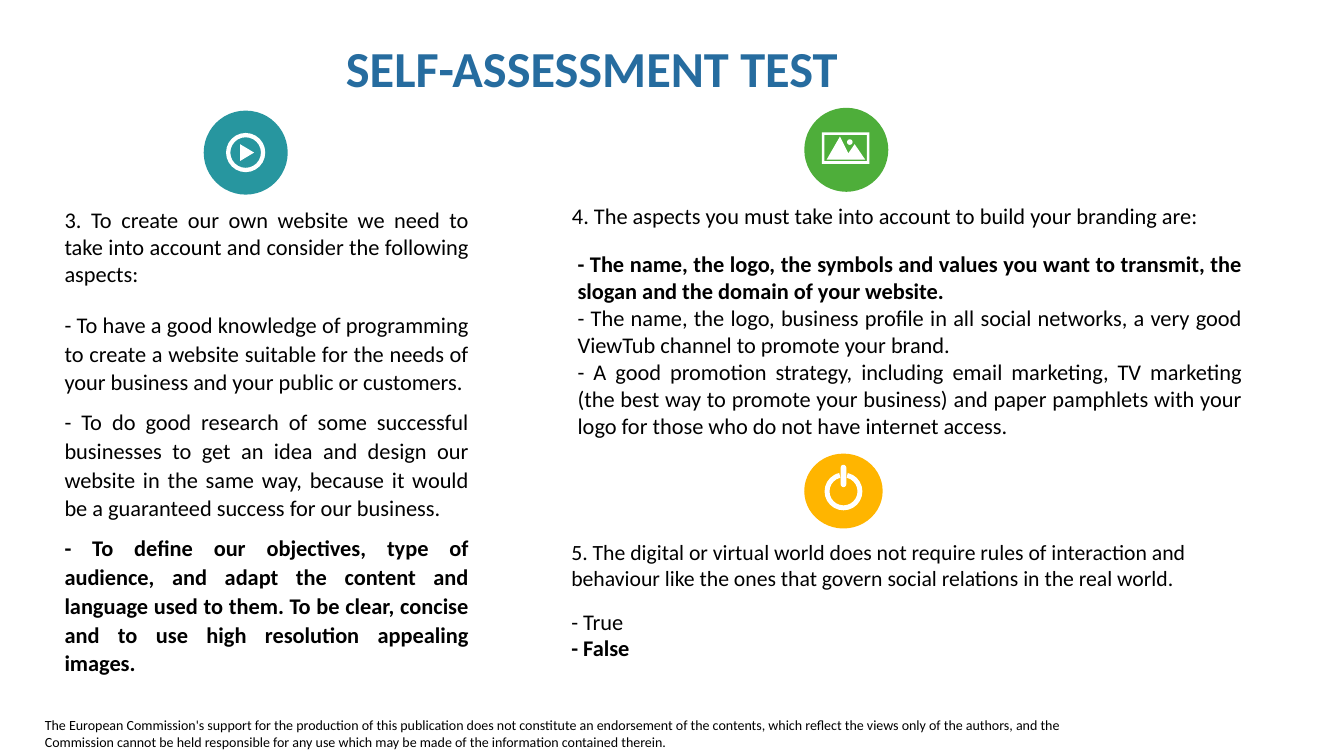
from pptx import Presentation
from pptx.dml.color import RGBColor
from pptx.enum import shapes, text
from pptx.util import Pt

BLACK, WHITE, BLUE = "000000", "FFFFFF", "266C9F"
TEAL, GREEN, AMBER = "27969F", "4EAE3A", "FFB500"
KIND = shapes.MSO_SHAPE
JUSTIFY = text.PP_ALIGN.JUSTIFY


def rgb(value):
    return RGBColor.from_string(value)


def write(slide, box, lines, size=16, bold=(), color=BLACK, align=None,
          spacing=None, after=None, anchor=text.MSO_ANCHOR.TOP):
    """Add a text box with one paragraph per line; bold lists the bold ones."""
    frame = slide.shapes.add_textbox(*map(Pt, box)).text_frame
    frame.word_wrap = True
    frame.vertical_anchor = anchor
    for index, line in enumerate(lines):
        paragraph = frame.paragraphs[0] if index == 0 else frame.add_paragraph()
        paragraph.text = line
        paragraph.alignment = align
        if spacing:
            paragraph.line_spacing = spacing
        if after:
            paragraph.space_after = Pt(after)
        font = paragraph.font
        font.name, font.size, font.bold = "Calibri", Pt(size), index in bold
        font.color.rgb = rgb(color)


def paint(shape, color):
    shape.shadow.inherit = False
    shape.fill.solid()
    shape.fill.fore_color.rgb = rgb(color)
    shape.line.fill.background()
    return shape


def solid(slide, kind, box, color=WHITE):
    return paint(slide.shapes.add_shape(kind, *map(Pt, box)), color)


def polygon(slide, x, y, points):
    """Fill a white outline whose points are offsets from x, y."""
    corners = [(Pt(x + dx), Pt(y + dy)) for dx, dy in points]
    builder = slide.shapes.build_freeform(*corners[0])
    builder.add_line_segments(corners[1:], close=True)
    paint(builder.convert_to_shape(), WHITE)


def play_icon(slide, x, y):
    solid(slide, KIND.OVAL, (x, y, 60, 60), TEAL)
    ring = solid(slide, KIND.DONUT, (x + 16, y + 16, 28, 28))
    ring.adjustments[0] = 0.11
    polygon(slide, x, y, [(26, 24), (36, 30), (26, 36)])


def photo_icon(slide, x, y):
    solid(slide, KIND.OVAL, (x, y, 60, 60), GREEN)
    border = solid(slide, KIND.FRAME, (x + 12.5, y + 17.5, 34, 22.5))
    border.adjustments[0] = 0.08
    polygon(slide, x, y, [(25.5, 20.5), (31.5, 32.5), (36, 26), (43.5, 37), (16, 37)])
    solid(slide, KIND.OVAL, (x + 30.5, y + 22.5, 4, 4))


def power_icon(slide, x, y):
    solid(slide, KIND.OVAL, (x, y, 56, 53.5), AMBER)
    ring = solid(slide, KIND.BLOCK_ARC, (x + 14.5, y + 13.5, 27, 27))
    start, end = 283, 257  # degrees, leaving a gap at the top
    for index, value in enumerate((start * 0.6, end * 0.6, 0.13)):
        ring.adjustments[index] = value
    bar = solid(slide, KIND.ROUNDED_RECTANGLE, (x + 26, y + 8, 4, 16))
    bar.adjustments[0] = 0.5


def question_three(slide, x, y):
    play_icon(slide, x + 106.5, y)
    write(slide, (x, y + 65, 303, 35), [
        "3. To create our own website we need to take into account and consider "
        "the following aspects:"], align=JUSTIFY)
    write(slide, (x, y + 138.3, 303, 66), [
        "- To have a good knowledge of programming to create a website suitable "
        "for the needs of your business and your public or customers.",
        "- To do good research of some successful businesses to get an idea and "
        "design our website in the same way, because it would be a guaranteed "
        "success for our business.",
        "- To define our objectives, type of audience, and adapt the content and "
        "language used to them. To be clear, concise and to use high resolution "
        "appealing images."], bold=(2,), align=JUSTIFY, spacing=1.07, after=8)


def question_four(slide, x, y):
    photo_icon(slide, x + 173, y)
    write(slide, (x, y + 63.5, 463, 27), [
        "4. The aspects you must take into account to build your branding are:"])
    write(slide, (x + 4, y + 98.5, 489, 66), [
        "- The name, the logo, the symbols and values you want to transmit, the "
        "slogan and the domain of your website.",
        "- The name, the logo, business profile in all social networks, a very good "
        "ViewTub channel to promote your brand.",
        "- A good promotion strategy, including email marketing, TV marketing (the "
        "best way to promote your business) and paper pamphlets with your logo for "
        "those who do not have internet access."], bold=(0,), align=JUSTIFY)


def question_five(slide, x, y):
    power_icon(slide, x + 173.5, y)
    write(slide, (x, y + 57.5, 464.5, 17), [
        "5. The digital or virtual world does not require rules of interaction and "
        "behaviour like the ones that govern social relations in the real world."],
        size=15.5)
    write(slide, (x, y + 106.5, 173, 66), ["- True", "- False"], bold=(1,))


def main():
    deck = Presentation()
    deck.slide_width, deck.slide_height = Pt(960), Pt(540)
    slide = deck.slides.add_slide(deck.slide_layouts[6])
    write(slide, (240, 22.5, 682, 57), ["SELF-ASSESSMENT TEST"], size=36, bold=(0,),
          color=BLUE, spacing=0.9, anchor=text.MSO_ANCHOR.MIDDLE)
    question_three(slide, 39, 79)
    question_four(slide, 401.5, 77)
    question_five(slide, 401, 324)
    write(slide, (25, 508.5, 753, 31.5), [
        "The European Commission's support for the production of this publication "
        "does not constitute an endorsement of the contents, which reflect the views "
        "only of the authors, and the Commission cannot be held responsible for any "
        "use which may be made of the information contained therein."], size=10)
    deck.save("out.pptx")


if __name__ == "__main__":
    main()
